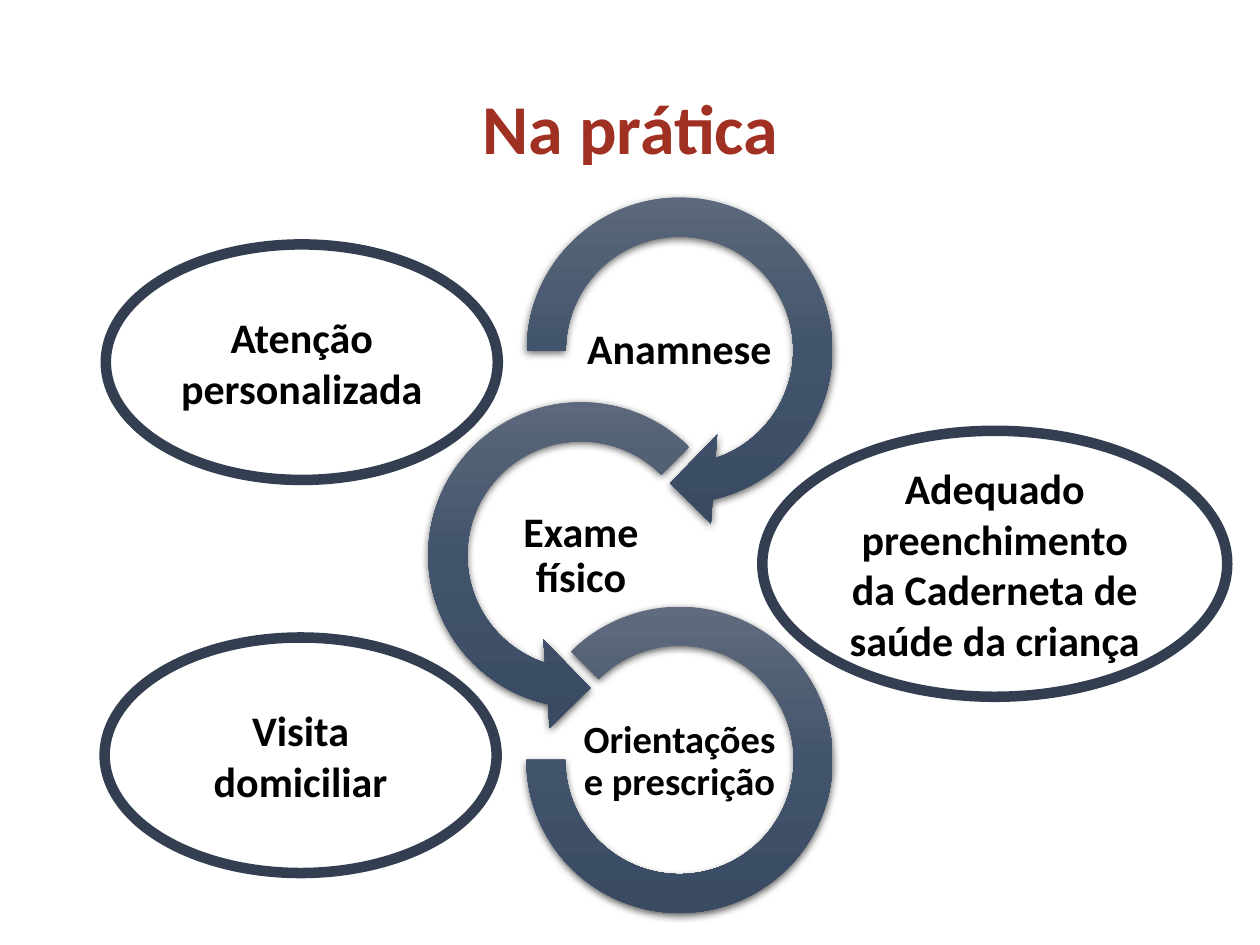
from dataclasses import dataclass

from pptx import Presentation
from pptx.dml.color import RGBColor
from pptx.enum.shapes import MSO_SHAPE as Shape
from pptx.enum.text import MSO_ANCHOR as Anchor, PP_ALIGN as Align
from pptx.oxml import parse_xml
from pptx.util import Pt

NAMESPACE = 'xmlns:a="http://schemas.openxmlformats.org/drawingml/2006/main"'


@dataclass(frozen=True)
class Theme:
    font: str = "Calibri"
    title: str = "A03021"
    text: str = "000000"
    outline: str = "333F50"
    gradient: tuple = ((0, "606B7D"), (50, "42546C"), (100, "394A62"))
    title_size: int = 40
    body_size: int = 24
    small_size: int = 22


THEME = Theme()


def write_text(shape, text, size, color=THEME.text, anchor=Anchor.MIDDLE):
    frame = shape.text_frame
    frame.word_wrap = True
    frame.vertical_anchor = anchor
    para = frame.paragraphs[0]
    para.text = text
    para.alignment = Align.CENTER
    para.font.name = THEME.font
    para.font.size = Pt(size)
    para.font.bold = True
    para.font.color.rgb = RGBColor.from_string(color)
    return frame


def add_title(page, text):
    box = page.shapes.add_textbox(Pt(137.5), Pt(44.6), Pt(445.7), Pt(55.4))
    write_text(box, text, THEME.title_size, THEME.title, Anchor.TOP)


def add_ring(page, kind, center_x, center_y, size, adjustments):
    ring = page.shapes.add_shape(
        kind, Pt(center_x - size / 2), Pt(center_y - size / 2), Pt(size), Pt(size))
    for index, value in enumerate(adjustments):
        ring.adjustments[index] = value
    stops = "".join(
        f'<a:gs pos="{position * 1000}"><a:srgbClr val="{color}"/></a:gs>'
        for position, color in THEME.gradient)
    properties = ring.element.spPr
    properties.append(parse_xml(
        f'<a:gradFill {NAMESPACE} rotWithShape="1"><a:gsLst>{stops}</a:gsLst>'
        '<a:lin ang="5400000" scaled="0"/></a:gradFill>'))
    ring.line.fill.background()
    properties.append(parse_xml(
        f'<a:effectLst {NAMESPACE}><a:outerShdw blurRad="{Pt(4.5)}" '
        f'dist="{Pt(1.5)}" dir="5400000" algn="ctr" rotWithShape="0">'
        '<a:srgbClr val="000000"><a:alpha val="63000"/></a:srgbClr>'
        '</a:outerShdw></a:effectLst>'))


def add_ring_label(page, center_x, center_y, text, size):
    width, height = 113, 56.2
    box = page.shapes.add_textbox(
        Pt(center_x - width / 2), Pt(center_y - height / 2), Pt(width), Pt(height))
    frame = write_text(box, text, size)
    frame.margin_left = frame.margin_right = Pt(1.4)
    frame.margin_top = frame.margin_bottom = Pt(1.4)
    frame.paragraphs[0].line_spacing = 0.9


def add_ellipse(page, left, top, width, height, text):
    ellipse = page.shapes.add_shape(
        Shape.OVAL, Pt(left), Pt(top), Pt(width), Pt(height))
    ellipse.shadow.inherit = False
    ellipse.fill.background()
    ellipse.line.color.rgb = RGBColor.from_string(THEME.outline)
    ellipse.line.width = Pt(6)
    write_text(ellipse, text, THEME.body_size)


def main():
    deck = Presentation()
    deck.slide_width, deck.slide_height = Pt(720), Pt(540)
    page = deck.slides.add_slide(deck.slide_layouts[6])
    add_title(page, "Na prática")

    steps = (
        (Shape.CIRCULAR_ARROW, 388.3, 203, (0.11, 11.423, 45, 108, 0.125),
         "Anamnese", THEME.body_size),
        (Shape.LEFT_CIRCULAR_ARROW, 332, 203, (0.11, 11.423, 63, 189, 0.125),
         "Exame físico", THEME.body_size),
        (Shape.BLOCK_ARC, 388.3, 175, (135, 108, 0.127),
         "Orientações e prescrição", THEME.small_size),
    )
    for row, (kind, center_x, size, adjustments, text, text_size) in enumerate(steps):
        add_ring(page, kind, center_x, 200.2 + 117 * row, size, adjustments)
        add_ring_label(page, center_x, 200.2 + 117.6 * row, text, text_size)

    add_ellipse(page, 60.5, 139.7, 224, 134.6, "Atenção personalizada")
    add_ellipse(page, 435.6, 246.2, 265.7, 152,
                "Adequado preenchimento da Caderneta de saúde da criança")
    add_ellipse(page, 59.8, 364.3, 224, 134.6, "Visita domiciliar")
    deck.save("out.pptx")


if __name__ == "__main__":
    main()
